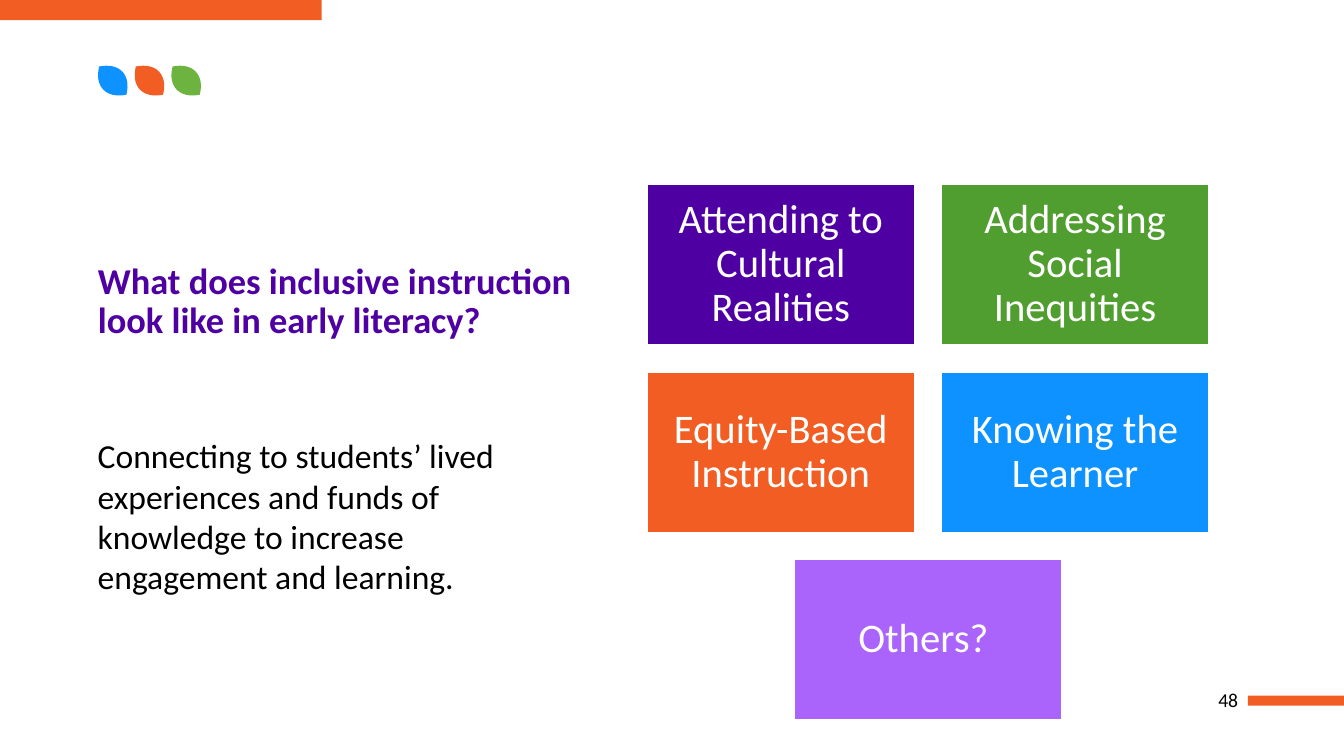
from dataclasses import dataclass

from pptx import Presentation
from pptx.dml.color import RGBColor
from pptx.enum.shapes import MSO_SHAPE
from pptx.enum.text import MSO_ANCHOR, MSO_AUTO_SIZE, PP_ALIGN
from pptx.shapes.autoshape import Shape
from pptx.slide import Slide
from pptx.util import Inches, Pt

RECT = MSO_SHAPE.RECTANGLE
TOP, MIDDLE = MSO_ANCHOR.TOP, MSO_ANCHOR.MIDDLE
LEFT, CENTER, RIGHT = PP_ALIGN.LEFT, PP_ALIGN.CENTER, PP_ALIGN.RIGHT

WHITE = RGBColor(0xFF, 0xFF, 0xFF)
BLACK = RGBColor(0x00, 0x00, 0x00)
INDIGO = RGBColor(0x4F, 0x00, 0xA3)
LILAC = RGBColor(0xAA, 0x64, 0xFB)
ORANGE = RGBColor(0xF1, 0x5D, 0x22)
BLUE = RGBColor(0x0D, 0x92, 0xFF)
GREEN = RGBColor(0x50, 0x9E, 0x2F)
LEAF_GREEN = RGBColor(0x6C, 0xB3, 0x3F)

FONT = "Calibri"
WIDTH, HEIGHT = Inches(13.33), Inches(7.5)


@dataclass(frozen=True)
class Box:
    """A frame in percent of the slide's width and height."""
    x: float
    y: float
    w: float
    h: float

    def frame(self) -> tuple[int, int, int, int]:
        return (int(WIDTH * self.x / 100), int(HEIGHT * self.y / 100),
                int(WIDTH * self.w / 100), int(HEIGHT * self.h / 100))


@dataclass(frozen=True)
class Style:
    size: int
    color: RGBColor
    align: PP_ALIGN = LEFT
    anchor: MSO_ANCHOR = TOP
    bold: bool = False
    pitch: float = 1.0


@dataclass(frozen=True)
class Tile:
    text: str
    col: float
    row: int
    color: RGBColor


TITLE_BOX = Box(6.53, 34.13, 36.98, 16.93)
BODY_BOX = Box(6.53, 56.93, 33.08, 22.93)
PAGE_BOX = Box(86.42, 90.67, 6.45, 3.73)
BARS = [Box(92.85, 92, 7.15, 1.33), Box(0, 0, 23.93, 2.67)]

TITLE = Style(26, INDIGO, bold=True, pitch=0.9)
BODY = Style(24, BLACK)
PAGE = Style(14, BLACK, RIGHT, MIDDLE)
LABEL = Style(29, WHITE, CENTER, MIDDLE, pitch=0.9)

GRID = Box(48.16, 24.4, 19.88, 21.2)
COL_STEP, ROW_STEP = 21.9, 24.8
TILES = [
    Tile("Attending to Cultural Realities", 0, 0, INDIGO),
    Tile("Addressing Social Inequities", 1, 0, GREEN),
    Tile("Equity-Based Instruction", 0, 1, ORANGE),
    Tile("Knowing the Learner", 1, 1, BLUE),
    Tile("Others? ", 0.5, 2, LILAC),
]

LEAVES = [BLUE, ORANGE, LEAF_GREEN]
LEAF_X, LEAF_Y, LEAF_STEP = 7.38, 8.8, 2.73
LEAF_TIP = (0.27, 0.28)
LEAF_BEND = [(-0.05, 0.2), (0.07, 0.32)]
STEPS = 16


def write(shape: Shape, text: str, style: Style) -> None:
    frame = shape.text_frame
    frame.word_wrap = True
    frame.auto_size = MSO_AUTO_SIZE.NONE
    frame.vertical_anchor = style.anchor
    para = frame.paragraphs[0]
    para.alignment = style.align
    para.line_spacing = style.pitch
    run = para.add_run()
    run.text = text
    font = run.font
    font.name, font.size, font.bold = FONT, Pt(style.size), style.bold
    font.color.rgb = style.color


def paint(shape: Shape, color: RGBColor) -> None:
    shape.shadow.inherit = False
    shape.fill.solid()
    shape.fill.fore_color.rgb = color
    shape.line.fill.background()


def add_bar(slide: Slide, box: Box, color: RGBColor) -> Shape:
    bar = slide.shapes.add_shape(RECT, *box.frame())
    paint(bar, color)
    return bar


def add_text(slide: Slide, box: Box, text: str, style: Style) -> None:
    write(slide.shapes.add_textbox(*box.frame()), text, style)


def add_tile(slide: Slide, tile: Tile) -> None:
    box = Box(GRID.x + tile.col * COL_STEP, GRID.y + tile.row * ROW_STEP,
              GRID.w, GRID.h)
    shape = add_bar(slide, box, tile.color)
    shape.line.color.rgb = WHITE
    shape.line.width = Pt(1)
    frame = shape.text_frame
    frame.margin_left = frame.margin_right = Inches(0.12)
    frame.margin_top = frame.margin_bottom = Inches(0.12)
    write(shape, tile.text, LABEL)


def leaf_edge() -> list[tuple[float, float]]:
    """Points in inches along the lower cubic curve, stem to tip."""
    (ax, ay), (bx, by) = LEAF_BEND
    tx, ty = LEAF_TIP
    edge = []
    for step in range(1, STEPS + 1):
        t = step / STEPS
        p, q, r = 3 * t * (1 - t) ** 2, 3 * t * t * (1 - t), t ** 3
        edge.append((p * ax + q * bx + r * tx, p * ay + q * by + r * ty))
    return edge


def add_leaf(slide: Slide, col: int, color: RGBColor) -> None:
    """The upper edge is the lower one turned half a circle."""
    x, y, _, _ = Box(LEAF_X + col * LEAF_STEP, LEAF_Y, 0, 0).frame()
    low = leaf_edge()
    high = [(LEAF_TIP[0] - px, LEAF_TIP[1] - py) for px, py in low]
    pen = slide.shapes.build_freeform(x, y)
    pen.add_line_segments([(x + Inches(px), y + Inches(py))
                           for px, py in low + high])
    paint(pen.convert_to_shape(), color)


def main() -> None:
    deck = Presentation()
    deck.slide_width, deck.slide_height = WIDTH, HEIGHT
    slide = deck.slides.add_slide(deck.slide_layouts.get_by_name("Title Only"))

    for bar in BARS:
        add_bar(slide, bar, ORANGE)
    for col, color in enumerate(LEAVES):
        add_leaf(slide, col, color)
    add_text(slide, PAGE_BOX, "48", PAGE)

    title = slide.shapes.title
    title.left, title.top, title.width, title.height = TITLE_BOX.frame()
    write(title, "What does inclusive instruction look like in early literacy?",
          TITLE)
    add_text(slide, BODY_BOX,
             "Connecting to students’ lived experiences and funds of "
             "knowledge to increase engagement and learning.", BODY)

    for tile in TILES:
        add_tile(slide, tile)
    deck.save("out.pptx")


if __name__ == "__main__":
    main()
